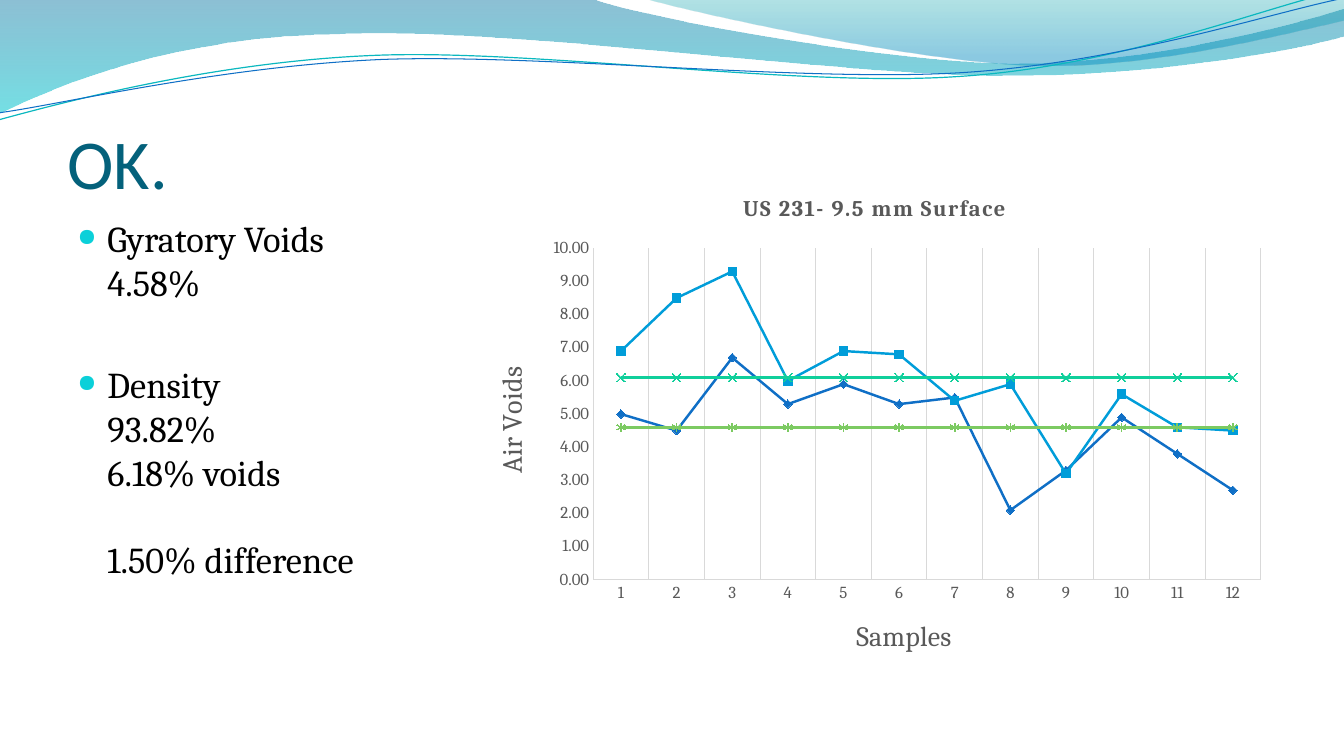
from dataclasses import dataclass

from lxml import etree
from pptx import Presentation, util as u
from pptx.chart import data as cd
from pptx.dml import color as dml
from pptx.enum import chart as ce, text as te
from pptx.oxml import ns


@dataclass(frozen=True)
class Theme:
    """Colours, fonts and type sizes of the deck."""
    title: str = "04617B"
    body: str = "000000"
    bullet: str = "0BD0D9"
    label: str = "595959"
    grid: str = "D9D9D9"
    heading_font: str = "Calibri"
    text_font: str = "Cambria"
    title_size: float = 50
    body_size: float = 26
    axis_title_size: float = 20
    chart_title_size: float = 16
    chart_size: float = 10
    tick_size: float = 12
    series: tuple = ("0F6FC6", "009DD9", "10CF9B", "7CCA62")


@dataclass(frozen=True)
class Box:
    """A rectangle in centimetres."""
    left: float
    top: float
    width: float
    height: float

    def lengths(self):
        """Return the four sides as slide lengths."""
        return [u.Cm(side) for side in (self.left, self.top, self.width, self.height)]


THEME = Theme()
PAGE = Box(0, 0, 33.87, 19.05)

BANDS = [
    ([(0, 0), (14.91, -0.03), (16.1, 0.43, 22.48, 1.6, 25.68, 1.6),
      (28.91, 1.6, 32.46, 0.66, 33.86, 0.23), (33.91, 0.91),
      (33.3, 1.12, 29.46, 1.93, 25.25, 1.91), (21.06, 1.91, 12.93, 0.71, 8.71, 0.86),
      (4.37, 0.91, 1.55, 2.11, -0.03, 2.87), (0, 0)],
     [(0, "0074A1", 45), (1, "00C6CF", 55)]),
    ([(16.23, -0.03), (17.25, 0.28, 23.09, 1.57, 26.04, 1.65),
      (28.98, 1.75, 32.56, 0.81, 33.86, 0.53), (33.86, 0), (16.23, -0.03)],
     [(0, "00A1A9", 30), (0.8, "008BBF", 45)]),
]
STRANDS = [
    ([(-0.03, 3.02), (1.63, 2.57, 5.36, 1.57, 9.37, 1.4),
      (13.39, 1.22, 20.07, 2.21, 24.13, 1.93), (28.19, 1.68, 31.8, 0.2, 33.81, -0.25)],
     "0AB8BF", 0.85),
    ([(0, 2.84), (1.6, 2.62, 5.54, 1.68, 9.6, 1.5),
      (13.64, 1.35, 20.22, 2.08, 24.26, 1.83), (28.32, 1.57, 31.88, 0.36, 33.88, -0.05)],
     "0F6FC6", 0.75),
]
FINDINGS = [
    ("Gyratory Voids\v4.58%", 0),
    ("Density\v93.82%\v6.18% voids\v\v1.50% difference", 42),
]
SAMPLES = 12
AIR_VOIDS = [
    ([5, 4.5, 6.7, 5.3, 5.9, 5.3, 5.5, 2.1, 3.3, 4.9, 3.8, 2.7], ce.XL_MARKER_STYLE.DIAMOND),
    ([6.9, 8.5, 9.3, 6, 6.9, 6.8, 5.4, 5.9, 3.2, 5.6, 4.6, 4.5], ce.XL_MARKER_STYLE.SQUARE),
    ([6.1] * SAMPLES, ce.XL_MARKER_STYLE.X),
    ([4.6] * SAMPLES, ce.XL_MARKER_STYLE.STAR),
]


def rgb(code):
    """Return a colour from its hex code."""
    return dml.RGBColor.from_string(code)


def style(font, size, color, name=THEME.text_font, bold=False):
    """Set the look of a font."""
    font.size, font.name, font.bold = u.Pt(size), name, bold
    font.color.rgb = rgb(color)


def style_line(line, color, weight):
    """Set the colour and weight of a line."""
    line.color.rgb, line.width = rgb(color), u.Pt(weight)


def add_outline(page, box, segments, close):
    """Draw lines and cubic curves relative to the box and return the shape."""
    start, *rest = [(u.Cm(box.left + x), u.Cm(box.top + y))
                    for segment in segments for x, y in zip(segment[::2], segment[1::2])]
    builder = page.shapes.build_freeform(*start)
    builder.add_line_segments(rest, close=close)
    shape = builder.convert_to_shape()
    shape.shadow.inherit = False
    steps = iter(list(shape.element.spPr.iter(ns.qn("a:lnTo"))))
    for segment in segments[1:]:
        first = next(steps)
        if len(segment) == 6:
            first.tag_name = None
            curve = etree.Element(ns.qn("a:cubicBezTo"))
            first.addprevious(curve)
            for step in (first, next(steps), next(steps)):
                curve.append(step[0])
                step.getparent().remove(step)
    return shape


def add_waves(page, box):
    """Draw the shaded bands and thin strands along the top."""
    for segments, stops in BANDS:
        band = add_outline(page, box, segments, True)
        band.line.fill.background()
        band.fill.gradient()
        band.fill.gradient_angle = 270
        for stop, (position, color, _) in zip(band.fill.gradient_stops, stops):
            stop.position, stop.color.rgb = position, rgb(color)
        for node, (_, _, opacity) in zip(band.element.spPr.iter(ns.qn("a:srgbClr")), stops):
            etree.SubElement(node, ns.qn("a:alpha")).set("val", str(opacity * 1000))
    for segments, color, weight in STRANDS:
        strand = add_outline(page, box, segments, False)
        strand.fill.background()
        style_line(strand.line, color, weight)


def add_title(page, box, words):
    """Place the slide title at the bottom of its box."""
    frame = page.shapes.add_textbox(*box.lengths()).text_frame
    frame.word_wrap = True
    frame.vertical_anchor = te.MSO_ANCHOR.BOTTOM
    frame.margin_left = frame.margin_right = frame.margin_bottom = 0
    frame.text = words
    style(frame.paragraphs[0].runs[0].font, THEME.title_size, THEME.title, THEME.heading_font)


def add_bullet(para):
    """Give a paragraph a hanging round coloured bullet."""
    props = para._p.get_or_add_pPr()
    props.set("marL", str(u.Cm(0.76)))
    props.set("indent", str(-u.Cm(0.76)))
    color = etree.SubElement(props, ns.qn("a:buClr"))
    etree.SubElement(color, ns.qn("a:srgbClr")).set("val", THEME.bullet)
    etree.SubElement(props, ns.qn("a:buSzPct")).set("val", "67000")
    etree.SubElement(props, ns.qn("a:buChar")).set("char", "●")


def add_findings(page, box):
    """List the measured voids and density."""
    frame = page.shapes.add_textbox(*box.lengths()).text_frame
    frame.word_wrap = True
    frame.text = "\n".join(words for words, _ in FINDINGS)
    for para, (_, gap) in zip(frame.paragraphs, FINDINGS):
        add_bullet(para)
        if gap:
            para.space_before = u.Pt(gap)
        style(para.font, THEME.body_size, THEME.body)
        for span in para.runs:
            style(span.font, THEME.body_size, THEME.body)
        for gap_line in para._p.findall(ns.qn("a:br")):
            etree.SubElement(gap_line, ns.qn("a:rPr")).set("sz", str(THEME.body_size * 100))


def set_layout(element, index, target=None, **fractions):
    """Fix the place of a chart part as fractions of the chart."""
    for old in element.findall(ns.qn("c:layout")):
        element.remove(old)
    layout = etree.Element(ns.qn("c:layout"))
    manual = etree.SubElement(layout, ns.qn("c:manualLayout"))
    values = {"layoutTarget": target} if target else {}
    values.update(xMode="edge", yMode="edge", **fractions)
    for name, value in values.items():
        etree.SubElement(manual, ns.qn(f"c:{name}")).set("val", str(value))
    element.insert(index, layout)


def set_chart_title(title, words, size, x, y, bold=False):
    """Write and place a chart or axis title, and return its run."""
    title.text_frame.text = words
    span = title.text_frame.paragraphs[0].runs[0]
    style(span.font, size, THEME.label, bold=bold)
    set_layout(title.element, 1, x=x, y=y)
    return span


def add_voids_chart(page, box):
    """Plot the air voids of each sample with their averages."""
    values = cd.CategoryChartData(number_format="0.00")
    values.categories = [str(number) for number in range(1, SAMPLES + 1)]
    for number, (voids, _) in enumerate(AIR_VOIDS, 1):
        values.add_series(f"Series {number}", voids)
    chart = page.shapes.add_chart(ce.XL_CHART_TYPE.LINE_MARKERS, *box.lengths(), values).chart
    chart.has_legend = False
    style(chart.font, THEME.chart_size, THEME.body)
    heading = set_chart_title(chart.chart_title, "US 231- 9.5 mm Surface",
                              THEME.chart_title_size, 0.333, 0.03, True)
    heading._r.get_or_add_rPr().set("spc", "125")
    set_layout(chart.element.find(".//" + ns.qn("c:plotArea")), 0, "inner",
               x=0.152, y=0.147, w=0.828, h=0.658)

    samples, voids = chart.category_axis, chart.value_axis
    for axis in (samples, voids):
        axis.major_tick_mark = axis.minor_tick_mark = ce.XL_TICK_MARK.NONE
        style_line(axis.format.line, THEME.grid, 0.75)
        style(axis.tick_labels.font, THEME.tick_size, THEME.label)
    set_chart_title(samples.axis_title, "Samples", THEME.axis_title_size, 0.472, 0.87)
    set_chart_title(voids.axis_title, "Air Voids", THEME.axis_title_size, 0.022, 0.372)
    voids.axis_title.element.find(".//" + ns.qn("a:bodyPr")).set("rot", "-5400000")
    samples.has_major_gridlines, voids.has_major_gridlines = True, False
    style_line(samples.major_gridlines.format.line, THEME.grid, 0.75)
    voids.minimum_scale, voids.maximum_scale, voids.major_unit = 0, 10, 1
    voids.tick_labels.number_format = "0.00"
    voids.tick_labels.number_format_is_linked = False

    plot = chart.plots[0]
    plot.vary_by_categories = False
    for series, color, (_, symbol) in zip(plot.series, THEME.series, AIR_VOIDS):
        series.smooth = False
        style_line(series.format.line, color, 1.75)
        marker = series.marker
        marker.style, marker.size = symbol, 6
        marker.format.line.color.rgb = rgb(color)
        if symbol in (ce.XL_MARKER_STYLE.X, ce.XL_MARKER_STYLE.STAR):
            marker.format.fill.background()
        else:
            marker.format.fill.solid()
            marker.format.fill.fore_color.rgb = rgb(color)


def main():
    """Build the deck."""
    deck = Presentation()
    _, _, deck.slide_width, deck.slide_height = PAGE.lengths()
    page = deck.slides.add_slide(deck.slide_layouts[6])
    add_waves(page, PAGE)
    add_title(page, Box(1.7, 1.96, 30.48, 3.18), "OK.")
    add_findings(page, Box(1.7, 5.33, 14.96, 12.32))
    add_voids_chart(page, Box(11.86, 4.39, 20.32, 12.7))
    deck.save("out.pptx")


if __name__ == "__main__":
    main()
